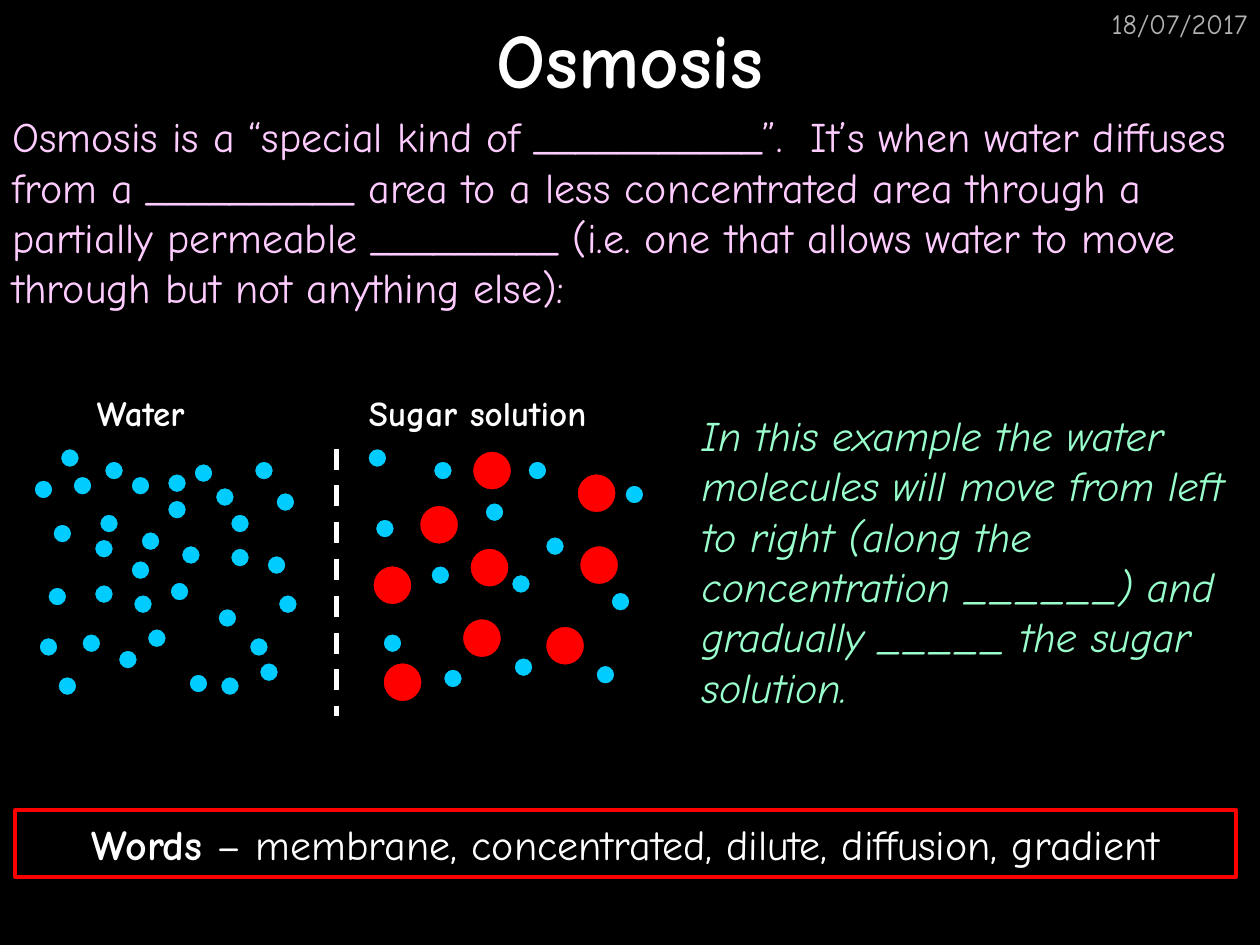
from lxml import etree
from pptx import Presentation
from pptx.dml.color import RGBColor
from pptx.enum.dml import MSO_LINE
from pptx.enum.shapes import MSO_CONNECTOR, MSO_SHAPE
from pptx.enum.text import MSO_ANCHOR, MSO_AUTO_SIZE, PP_ALIGN
from pptx.oxml.ns import qn
from pptx.util import Inches, Pt

LEFT, CENTER, RIGHT = PP_ALIGN.LEFT, PP_ALIGN.CENTER, PP_ALIGN.RIGHT
MIDDLE = MSO_ANCHOR.MIDDLE
NO_FIT = MSO_AUTO_SIZE.NONE
OVAL, RECT = MSO_SHAPE.OVAL, MSO_SHAPE.RECTANGLE
STRAIGHT = MSO_CONNECTOR.STRAIGHT
DASH = MSO_LINE.DASH

# Grid of 100 columns by 75 rows; every position is given in cells
COLS, ROWS, CELL = 100, 75, Inches(0.1)
TITLE_ONLY = 5

BLACK, WHITE, GREY = "000000", "FFFFFF", "B2B2B2"
PINK, GREEN, BLUE, RED = "FFCCFF", "99FFCC", "00CCFF", "FF0000"


def color(hex_str):
    return RGBColor.from_string(hex_str)


def cells(*values):
    return [round(v * CELL) for v in values]


def add_run(p, text, font="Comic Neue", size=24, fill=WHITE, bold=False, italic=False):
    r = p.add_run()
    r.text = text
    r.font.name, r.font.size = font, Pt(size)
    r.font.bold, r.font.italic = bold, italic
    r.font.color.rgb = color(fill)


class Deck:
    def __init__(self):
        self.prs = Presentation()
        self.prs.slide_width, self.prs.slide_height = cells(COLS, ROWS)
        self.s = self.prs.slides.add_slide(self.prs.slide_layouts[TITLE_ONLY])
        bg = self.s.background.fill
        bg.solid()
        bg.fore_color.rgb = color(BLACK)

    def paragraph(self, sp, align):
        tf = sp.text_frame
        tf.word_wrap, tf.auto_size = True, NO_FIT
        p = tf.paragraphs[0]
        p.alignment = align
        return p

    def title(self, text, box, **fmt):
        sp = self.s.shapes.title
        sp.left, sp.top, sp.width, sp.height = cells(*box)
        sp.text_frame.vertical_anchor = MIDDLE
        add_run(self.paragraph(sp, CENTER), text, **fmt)

    def text(self, text, box, align=LEFT, **fmt):
        sp = self.s.shapes.add_textbox(*cells(*box))
        add_run(self.paragraph(sp, align), text, **fmt)

    def shape(self, kind, box, fill=None, line=BLACK, width=0.75):
        sp = self.s.shapes.add_shape(kind, *cells(*box))
        sp.shadow.inherit = False
        if fill:
            sp.fill.solid()
            sp.fill.fore_color.rgb = color(fill)
        else:
            sp.fill.background()
        sp.line.color.rgb, sp.line.width = color(line), Pt(width)
        return sp

    def molecules(self, places, size, fill):
        for x, y in places:
            self.shape(OVAL, (x, y, size, size), fill)

    def dashed_line(self, start, end, line, width):
        cn = self.s.shapes.add_connector(STRAIGHT, *cells(*start, *end))
        cn.line.color.rgb, cn.line.width = color(line), Pt(width)
        cn.line.dash_style = DASH
        etree.SubElement(cn._element.spPr, qn("a:effectLst"))

    def word_bank(self, label, words, box):
        sp = self.shape(RECT, box, line=RED, width=2)
        sp.text_frame.vertical_anchor = MIDDLE
        p = self.paragraph(sp, CENTER)
        add_run(p, label, bold=True)
        add_run(p, words)


# Upper left corners of the molecules, as column and row
WATER_LEFT = [
    (4.8, 35.6), (5.8, 37.8), (8.3, 36.6), (15.4, 36.8), (13.3, 39.7), (7.5, 42.8),
    (14.4, 43.3), (18.3, 43.5), (13.5, 46.2), (11.7, 49.9), (17.1, 38.7), (17.3, 48.3),
    (22.1, 47.2), (20.6, 52.6), (10.6, 47.2), (7.5, 46.4), (4.2, 41.6), (15, 53.5),
    (2.7, 38.1), (10.4, 37.8), (13.3, 37.6), (7.9, 40.8), (10.4, 44.5), (3.1, 50.6),
    (6.5, 50.3), (19.8, 50.6), (3.8, 46.6), (9.4, 51.6), (20.2, 36.6), (18.3, 40.8),
    (11.2, 42.2), (4.6, 53.7), (17.5, 53.7), (21.2, 44.1), (21.9, 39.1),
]
WATER_RIGHT = [
    (29.2, 35.6), (34.4, 36.6), (29.8, 41.2), (34.2, 44.9), (38.5, 39.9), (30.4, 50.3),
    (41.9, 36.6), (40.6, 45.6), (35.2, 53.1), (40.8, 52.2), (48.5, 47), (43.3, 42.6),
    (49.6, 38.5), (47.3, 52.8),
]
SUGAR = [
    (33.3, 40.1), (29.6, 44.9), (36.7, 49.1), (30.4, 52.6), (37.3, 43.5), (37.5, 35.8),
    (43.3, 49.7), (46, 43.3), (45.8, 37.6),
]


def main():
    deck = Deck()

    # Heading and definition
    deck.text("18/07/2017", (84.4, 0, 15.6, 3.3), RIGHT, size=16, fill=GREY)
    deck.title("Osmosis", (0, 0, COLS, 9.2), size=44, bold=True)
    deck.text("Osmosis is a “special kind of ___________”.  It’s when water diffuses "
              "from a __________ area to a less concentrated area through a partially "
              "permeable _________ (i.e. one that allows water to move through but not "
              "anything else):", (0, 8.3, COLS, 17), fill=PINK)

    # Diagram: membrane between water and sugar solution
    deck.dashed_line((26.7, 35.6), (26.7, 56.8), WHITE, 3)
    deck.molecules(WATER_LEFT + WATER_RIGHT, 1.5, BLUE)
    deck.molecules(SUGAR, 3.1, RED)
    deck.text("Water", (6.7, 30.6, 19.6, 4.3), size=20, bold=True)
    deck.text("Sugar solution", (28.3, 30.6, 26.7, 4.3), size=20, bold=True)

    # Explanation and word bank
    deck.text("In this example the water molecules will move from left to right (along "
              "the concentration ______) and gradually _____ the sugar solution.",
              (54.7, 32, 45.3, 25), fill=GREEN, italic=True)
    deck.word_bank("Words", " – membrane, concentrated, dilute, diffusion, gradient",
                   (1.2, 64.3, 96.9, 5.3))

    deck.prs.save("out.pptx")


if __name__ == "__main__":
    main()
